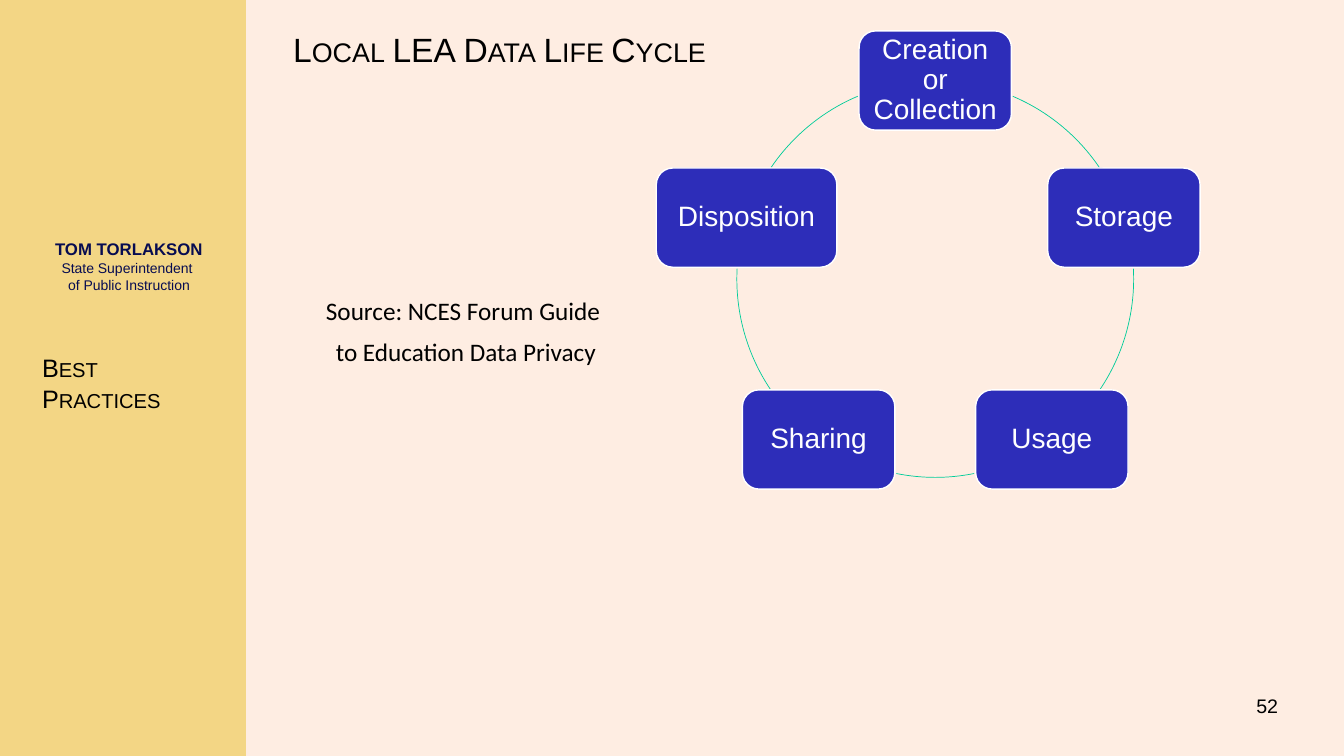
from math import cos, radians, sin

from pptx import Presentation
from pptx.dml.color import RGBColor
from pptx.enum.shapes import MSO_SHAPE as Preset
from pptx.enum.text import MSO_ANCHOR as Anchor, MSO_AUTO_SIZE as AutoSize, PP_ALIGN as Align
from pptx.util import Cm, Pt

COLORS = {"page": "FEEDE2", "sidebar": "F3D685", "official": "070C51", "text": "000000",
          "stage": "2D2DB9", "stage_text": "FFFFFF", "ring": "00CC99"}

TITLE = [[("Local LEA Data Life Cycle", 24, False)]]
OFFICIAL = [[("TOM TORLAKSON", 12, True), ("State Superintendent ", 10, False),
             ("of Public Instruction", 10, False)]]
SECTION = [[("Best", 18, False)], [("Practices", 18, False)]]
SOURCE = [[("Source: NCES Forum Guide", 18, False)], [(" to Education Data Privacy", 18, False)]]
PAGE_NUMBER = [[("52", 14, False)]]

STAGES = [("Creation or Collection", 3.84), ("Storage", 3.84), ("Usage", 3.84),
          ("Sharing", 3.84), ("Disposition", 4.55)]
STAGE_HEIGHT = 2.5
ARCS = [(293, 325.8), (357, 33.8), (78.7, 101.3), (146.2, 183), (214.2, 247)]
RING_X, RING_Y, RADIUS = 23.57, 7.03, 5


def rgb(part):
    return RGBColor.from_string(COLORS[part])


def write(frame, paragraphs, color="text", align=Align.LEFT, font="Arial",
          small_caps=False, spacing=None, after=None):
    for index, lines in enumerate(paragraphs):
        paragraph = frame.paragraphs[0] if index == 0 else frame.add_paragraph()
        paragraph.alignment = align
        paragraph.line_spacing = spacing
        paragraph.space_after = after
        for number, (words, size, bold) in enumerate(lines):
            if number:
                paragraph.add_line_break()
            run = paragraph.add_run()
            run.text = words
            run.font.name, run.font.size, run.font.bold = font, Pt(size), bold
            run.font.color.rgb = rgb(color)
            if small_caps:
                run._r.get_or_add_rPr().set("cap", "small")


def add_text(box, paragraphs, anchor=Anchor.TOP, wrap=True, grow=False, **style):
    frame = slide.shapes.add_textbox(*map(Cm, box)).text_frame
    frame.word_wrap = wrap
    frame.vertical_anchor = anchor
    if grow:
        frame.auto_size = AutoSize.SHAPE_TO_FIT_TEXT
    write(frame, paragraphs, **style)


def add_preset(preset, box, fill=None, line=None, width=1):
    shape = slide.shapes.add_shape(preset, *map(Cm, box))
    shape.shadow.inherit = False
    if fill:
        shape.fill.solid()
        shape.fill.fore_color.rgb = rgb(fill)
    else:
        shape.fill.background()
    if line:
        shape.line.color.rgb = rgb(line)
        shape.line.width = Pt(width)
    else:
        shape.line.fill.background()
    return shape


deck = Presentation()
deck.slide_width, deck.slide_height = Cm(33.87), Cm(19.05)
slide = deck.slides.add_slide(deck.slide_layouts[6])
slide.background.fill.solid()
slide.background.fill.fore_color.rgb = rgb("page")

add_preset(Preset.RECTANGLE, (0, 0, 6.2, 19.05), "sidebar")
add_text((0.89, 5.74, 4.72, 1.93), OFFICIAL, Anchor.MIDDLE, color="official", align=Align.CENTER)
add_text((7.14, 0.3, 20.14, 1.85), TITLE, Anchor.MIDDLE, small_caps=True)
add_text((26.26, 17.35, 6.2, 1.27), PAGE_NUMBER, align=Align.RIGHT)

for index, ((stage, width), (start, end)) in enumerate(zip(STAGES, ARCS)):
    arc = add_preset(Preset.ARC, (RING_X - RADIUS, RING_Y - RADIUS, 2 * RADIUS, 2 * RADIUS),
                     line="ring", width=0.5)
    arc.adjustments[0], arc.adjustments[1] = start * 0.6, end * 0.6

    angle = radians(index * 360 / len(STAGES) - 90)
    left = RING_X + RADIUS * cos(angle) - width / 2
    top = RING_Y + RADIUS * sin(angle) - STAGE_HEIGHT / 2
    node = add_preset(Preset.ROUNDED_RECTANGLE, (left, top, width, STAGE_HEIGHT),
                      "stage", "stage_text")
    frame = node.text_frame
    frame.word_wrap = True
    frame.vertical_anchor = Anchor.MIDDLE
    frame.margin_left = frame.margin_right = frame.margin_top = frame.margin_bottom = Cm(0.2)
    write(frame, [[(stage, 20, False)]], "stage_text", Align.CENTER, spacing=0.9)

add_text((2.97, 7.26, 17.4, 2.08), SOURCE, grow=True, align=Align.CENTER, font="Calibri",
         spacing=1.07, after=Pt(6))
add_text((0.81, 8.76, 3.53, 1.8), SECTION, wrap=False, grow=True, small_caps=True)

deck.save("out.pptx")
